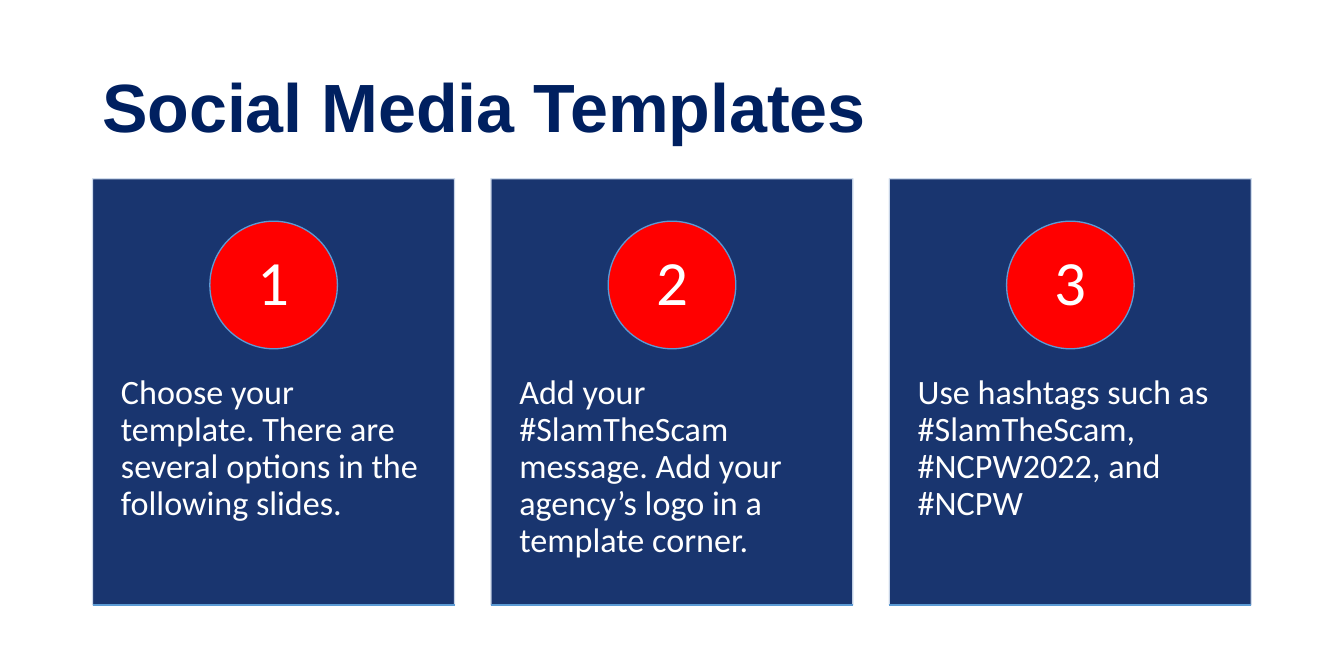
from dataclasses import dataclass

from lxml import etree
from pptx import Presentation
from pptx.dml.color import RGBColor
from pptx.enum import shapes, text
from pptx.oxml import ns
from pptx.util import Inches, Pt


@dataclass(frozen=True)
class Theme:
    navy: RGBColor = RGBColor(0x00, 0x20, 0x60)
    card_edge: RGBColor = RGBColor(0xD2, 0xDE, 0xEF)
    accent: RGBColor = RGBColor(0x5B, 0x9B, 0xD5)
    red: RGBColor = RGBColor(0xFF, 0x00, 0x00)
    white: RGBColor = RGBColor(0xFF, 0xFF, 0xFF)
    title_font: str = "Arial"
    body_font: str = "Calibri"
    title_size: int = 52
    number_size: int = 48
    body_size: int = 26
    line_width: int = 1
    card_opacity: int = 90


THEME = Theme()

STEPS = [
    "Choose your template. There are several options in the following slides.",
    "Add your #SlamTheScam message. Add your agency’s logo in a template corner.",
    "Use hashtags such as #SlamTheScam, #NCPW2022, and #NCPW",
]

# Card grid, in inches
CARD_LEFT, CARD_TOP = 0.98, 1.89
CARD_WIDTH, CARD_HEIGHT = 3.83, 4.51
CARD_PITCH = 4.215
BADGE_TOP, BADGE_SIZE = 2.34, 1.35
MESSAGE_TOP, MESSAGE_HEIGHT = 3.61, 2.71


def write(frame, wording, font_name, size, color, align, anchor, margins, bold=False):
    """Fill a text frame with one paragraph; margins are horizontal, vertical."""
    frame.word_wrap = True
    frame.auto_size = text.MSO_AUTO_SIZE.NONE
    frame.vertical_anchor = anchor
    frame.margin_left = frame.margin_right = Inches(margins[0])
    frame.margin_top = frame.margin_bottom = Inches(margins[1])
    paragraph = frame.paragraphs[0]
    paragraph.text = wording
    paragraph.alignment = align
    paragraph.line_spacing = 0.9
    font = paragraph.font
    font.name, font.size, font.bold = font_name, Pt(size), bold
    font.color.rgb = color


def set_opacity(shape, percent):
    for color in shape.fill._xPr.iter(ns.qn("a:srgbClr")):
        etree.SubElement(color, ns.qn("a:alpha"), val=str(percent * 1000))


def add_panel(slide, preset, left, top, width, height, fill, edge):
    panel = slide.shapes.add_shape(
        preset, Inches(left), Inches(top), Inches(width), Inches(height))
    panel.shadow.inherit = False
    panel.fill.solid()
    panel.fill.fore_color.rgb = fill
    panel.line.color.rgb = edge
    panel.line.width = Pt(THEME.line_width)
    return panel


def add_base_line(slide, left, top, width):
    base = slide.shapes.add_connector(
        shapes.MSO_CONNECTOR.STRAIGHT,
        Inches(left), Inches(top), Inches(left + width), Inches(top))
    base.line.color.rgb = THEME.accent
    base.line.width = Pt(THEME.line_width)
    etree.SubElement(base._element.spPr, ns.qn("a:effectLst"))


def add_title(slide, wording):
    title = slide.shapes.title
    title.left, title.top = Inches(CARD_LEFT), Inches(0.58)
    title.width, title.height = Inches(12.27), Inches(1.18)
    write(title.text_frame, wording, THEME.title_font, THEME.title_size, THEME.navy,
          text.PP_ALIGN.LEFT, text.MSO_ANCHOR.MIDDLE, (0.1, 0.05), bold=True)


def add_step(slide, number, message):
    left = CARD_LEFT + (number - 1) * CARD_PITCH

    # Translucent card
    card = add_panel(slide, shapes.MSO_SHAPE.RECTANGLE, left, CARD_TOP,
                     CARD_WIDTH, CARD_HEIGHT, THEME.navy, THEME.card_edge)
    set_opacity(card, THEME.card_opacity)

    # Message
    message_box = slide.shapes.add_textbox(
        Inches(left), Inches(MESSAGE_TOP), Inches(CARD_WIDTH), Inches(MESSAGE_HEIGHT))
    write(message_box.text_frame, message, THEME.body_font, THEME.body_size, THEME.white,
          text.PP_ALIGN.LEFT, text.MSO_ANCHOR.TOP, (0.3, 0.36))

    # Numbered badge, centred on the card
    badge = add_panel(slide, shapes.MSO_SHAPE.OVAL, left + (CARD_WIDTH - BADGE_SIZE) / 2,
                      BADGE_TOP, BADGE_SIZE, BADGE_SIZE, THEME.red, THEME.accent)
    write(badge.text_frame, str(number), THEME.body_font, THEME.number_size, THEME.white,
          text.PP_ALIGN.CENTER, text.MSO_ANCHOR.MIDDLE, (0.11, 0.01))

    # Line under the card
    add_base_line(slide, left, CARD_TOP + CARD_HEIGHT, CARD_WIDTH)


def main():
    deck = Presentation()
    deck.slide_width, deck.slide_height = Inches(14.22), Inches(7.11)
    title_only = deck.slide_layouts.get_by_name("Title Only")
    slide = deck.slides.add_slide(title_only)
    add_title(slide, "Social Media Templates")
    for number, message in enumerate(STEPS, start=1):
        add_step(slide, number, message)
    deck.save("out.pptx")


if __name__ == "__main__":
    main()
